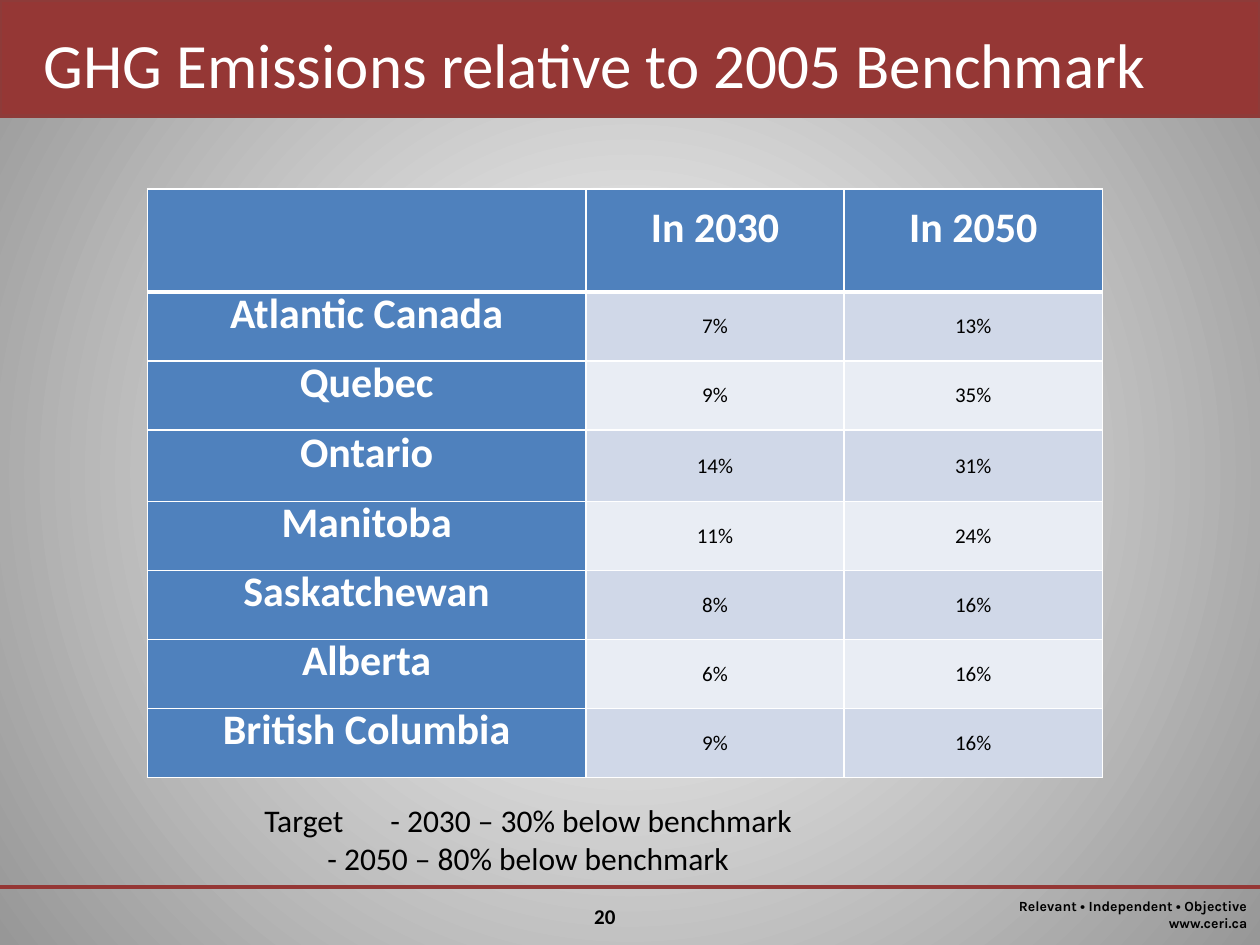
import dataclasses

import pptx
import pptx.dml.color
import pptx.enum.shapes
import pptx.enum.text
import pptx.oxml
import pptx.oxml.ns
import pptx.util

ANCHOR = pptx.enum.text.MSO_ANCHOR
ALIGN = pptx.enum.text.PP_ALIGN


@dataclasses.dataclass(frozen=True)
class Theme:
    """Colours, fonts and type sizes of the deck."""
    accent: str = "953735"
    accent_edge: str = "8E3B39"
    header: str = "4F81BD"
    bands: tuple = ("D0D8E8", "E9EDF4")
    light: str = "FFFFFF"
    dark: str = "000000"
    backdrop: tuple = ("FFFFFF", "979797")
    body_font: str = "Calibri"
    footer_font: str = "Karla"
    title_size: int = 36
    heading_size: int = 24
    note_size: int = 18
    value_size: int = 12
    footer_size: int = 8


@dataclasses.dataclass(frozen=True)
class Box:
    """A rectangle in inches."""
    left: float
    top: float
    width: float
    height: float

    def inner(self, left, top, width, height):
        """Return the inner box given as shares of this one."""
        return Box(self.left + left * self.width, self.top + top * self.height,
                   width * self.width, height * self.height)

    def emu(self):
        """Return left, top, width and height as lengths."""
        return [pptx.util.Inches(side) for side in dataclasses.astuple(self)]


THEME = Theme()
PAGE = Box(0, 0, 10, 7.5)
EMISSIONS = [
    ("", "In 2030", "In 2050"),
    ("Atlantic Canada", "7%", "13%"),
    ("Quebec", "9%", "35%"),
    ("Ontario", "14%", "31%"),
    ("Manitoba", "11%", "24%"),
    ("Saskatchewan", "8%", "16%"),
    ("Alberta", "6%", "16%"),
    ("British Columbia", "9%", "16%"),
]
COLUMN_WEIGHTS = (3.48, 2.05, 2.05)
ROW_WEIGHTS = (0.82, 0.55, 0.55, 0.57, 0.55, 0.55, 0.55, 0.55)


def rgb(value):
    """Return a colour object for a hex value."""
    return pptx.dml.color.RGBColor.from_string(value)


def write(frame, text, *, size, color=THEME.dark, font=THEME.body_font,
          bold=False, align=ALIGN.LEFT, spacing=None):
    """Fill a text frame; newlines split paragraphs, vertical tabs split lines."""
    frame.text = text
    for paragraph in frame.paragraphs:
        paragraph.alignment = align
        if spacing:
            paragraph.line_spacing = pptx.util.Pt(spacing)
        for run in paragraph.runs:
            run.font.name = font
            run.font.size = pptx.util.Pt(size)
            run.font.bold = bold
            run.font.color.rgb = rgb(color)


def add_label(slide, box, text, anchor=ANCHOR.TOP, **style):
    """Place a wrapping text box."""
    frame = slide.shapes.add_textbox(*box.emu()).text_frame
    frame.word_wrap = True
    frame.vertical_anchor = anchor
    write(frame, text, **style)


def border_cell(cell, widths):
    """Draw white cell borders, given widths in points by side."""
    properties = cell._tc.get_or_add_tcPr()
    for position, (side, width) in enumerate(widths.items()):
        properties.insert(position, pptx.oxml.parse_xml(
            f'<a:ln{side} {pptx.oxml.ns.nsdecls("a")} w="{pptx.util.Pt(width)}">'
            f'<a:solidFill><a:srgbClr val="{THEME.light}"/></a:solidFill></a:ln{side}>'))


def paint_background(slide):
    """Fill the slide with a gradient that spreads from its centre."""
    fill = slide.background.fill
    fill.gradient()
    for stop, color in zip(fill.gradient_stops, THEME.backdrop):
        stop.color.rgb = rgb(color)
    linear = next(slide.element.iter(pptx.oxml.ns.qn("a:lin")))
    linear.getparent().replace(linear, pptx.oxml.parse_xml(
        f'<a:path {pptx.oxml.ns.nsdecls("a")} path="circle">'
        '<a:fillToRect l="50000" t="50000" r="50000" b="50000"/></a:path>'))


def build_title(slide, box):
    """Draw the title band and its heading."""
    band = slide.shapes.add_shape(pptx.enum.shapes.MSO_SHAPE.RECTANGLE,
                                  *box.inner(0, 0, 1, 0.92).emu())
    band.shadow.inherit = False
    band.fill.solid()
    band.fill.fore_color.rgb = rgb(THEME.accent)
    band.line.color.rgb = rgb(THEME.accent_edge)
    band.line.width = pptx.util.Pt(2)
    add_label(slide, box.inner(0.025, 0, 0.91, 1),
              "GHG Emissions relative to 2005 Benchmark", anchor=ANCHOR.MIDDLE,
              size=THEME.title_size, color=THEME.light)


def build_table(slide, box):
    """Place the emissions table with banded values."""
    table = slide.shapes.add_table(len(EMISSIONS), len(COLUMN_WEIGHTS),
                                   *box.emu()).table
    for column, weight in zip(table.columns, COLUMN_WEIGHTS):
        column.width = pptx.util.Inches(box.width * weight / sum(COLUMN_WEIGHTS))
    for row, weight in zip(table.rows, ROW_WEIGHTS):
        row.height = pptx.util.Inches(box.height * weight / sum(ROW_WEIGHTS))
    for r, record in enumerate(EMISSIONS):
        for c, text in enumerate(record):
            cell = table.cell(r, c)
            heading = r == 0 or c == 0
            cell.fill.solid()
            cell.fill.fore_color.rgb = rgb(
                THEME.header if heading else THEME.bands[(r - 1) % 2])
            cell.vertical_anchor = ANCHOR.MIDDLE
            cell.margin_left = cell.margin_right = pptx.util.Inches(0.07)
            cell.margin_top = cell.margin_bottom = 0
            write(cell.text_frame, text, bold=heading, align=ALIGN.CENTER, spacing=15,
                  size=THEME.heading_size if heading else THEME.value_size,
                  color=THEME.light if heading else THEME.dark)
            border_cell(cell, {"L": 1, "R": 1, "T": 3 if r == 1 else 1,
                               "B": 3 if r == 0 else 1})


def build_target(slide, box):
    """State the reduction targets."""
    add_label(slide, box,
              "Target\t- 2030 – 30% below benchmark\n\t- 2050 – 80% below benchmark",
              size=THEME.note_size)


def build_footer(slide, box):
    """Draw the footer rule, page number and tagline."""
    left, top, width, _ = box.emu()
    rule = slide.shapes.add_connector(pptx.enum.shapes.MSO_CONNECTOR.STRAIGHT,
                                      left, top, left + width, top)
    rule.line.color.rgb = rgb(THEME.accent)
    rule.line.width = pptx.util.Pt(2.25)
    rule._element.spPr.append(pptx.oxml.parse_xml(
        f'<a:effectLst {pptx.oxml.ns.nsdecls("a")}/>'))
    add_label(slide, box.inner(0.425, 0.17, 0.11, 0.65), "20",
              size=THEME.value_size, bold=True, align=ALIGN.CENTER)
    add_label(slide, box.inner(0.78, 0.07, 0.22, 0.8),
              "Relevant • Independent • Objective\vwww.ceri.ca",
              size=THEME.footer_size, font=THEME.footer_font, bold=True,
              align=ALIGN.RIGHT)


def main():
    """Build and save the slide."""
    deck = pptx.Presentation()
    _, _, deck.slide_width, deck.slide_height = PAGE.emu()
    slide = deck.slides.add_slide(deck.slide_layouts[6])
    paint_background(slide)
    build_title(slide, PAGE.inner(0, 0, 1, 1 / 7.5))
    build_table(slide, PAGE.inner(0.117, 0.2, 0.758, 4.67 / 7.5))
    build_target(slide, PAGE.inner(0.2, 6.31 / 7.5, 0.45, 0.71 / 7.5))
    build_footer(slide, PAGE.inner(0, 7.04 / 7.5, 1, 0.46 / 7.5))
    deck.save("out.pptx")


if __name__ == "__main__":
    main()
